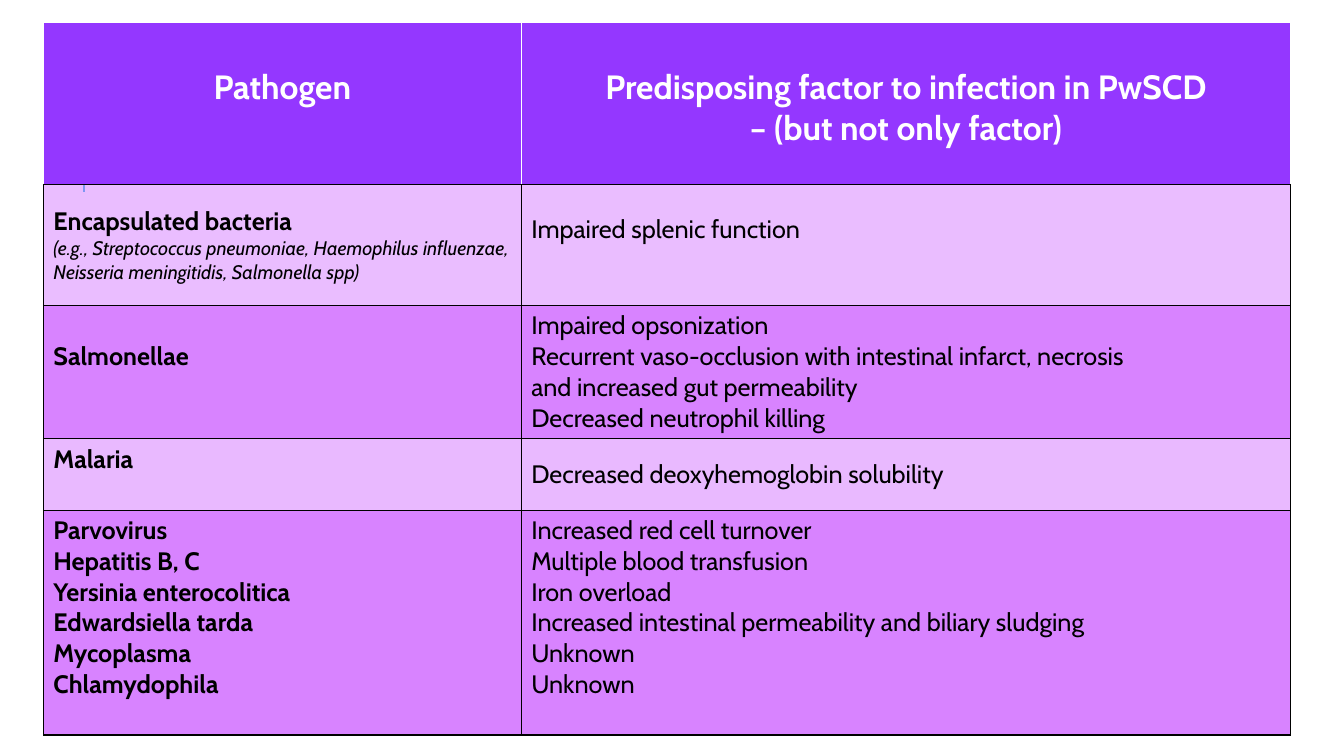
from lxml import etree
from pptx import Presentation
from pptx.dml.color import RGBColor
from pptx.enum.shapes import MSO_CONNECTOR
from pptx.enum.text import MSO_ANCHOR, PP_ALIGN
from pptx.oxml.ns import qn
from pptx.util import Inches, Pt

BLACK, WHITE = "000000", "FFFFFF"
HEADER, VIOLET, ACCENT = "9437FF", "D883FF", "1CADE4"
COLUMN_WIDTHS = [4.74, 7.63]
ROW_HEIGHTS = [1.61, 1.2, 1.31, 0.71, 2.23]
ROW_OPACITY = [53, 100, 56, 100]
RAISED = 0.35  # bottom margin that lifts middle-anchored text by half a line

HEADINGS = [
    ["Pathogen"],
    ["Predisposing factor to infection in PwSCD", "– (but not only factor)"],
]
EXAMPLES = ("(e.g., Streptococcus pneumoniae, Haemophilus influenzae, "
            "Neisseria meningitidis, Salmonella spp)")
# Each row: (pathogens, bottom margin), (factors, bottom margin)
ROWS = [
    ((["Encapsulated bacteria", EXAMPLES], 0.05),
     (["Impaired splenic function"], RAISED)),
    ((["Salmonellae"], RAISED),
     (["Impaired opsonization",
       "Recurrent vaso-occlusion with intestinal infarct, necrosis\n"
       "and increased gut permeability",
       "Decreased neutrophil killing"], 0.05)),
    ((["Malaria"], RAISED),
     (["Decreased deoxyhemoglobin solubility"], 0.05)),
    ((["Parvovirus\nHepatitis B, C", "Yersinia enterocolitica",
       "Edwardsiella tarda", "Mycoplasma", "Chlamydophila"], RAISED),
     (["Increased red cell turnover",
       "Multiple blood transfusion\nIron overload\n"
       "Increased intestinal permeability and biliary sludging",
       "Unknown\nUnknown"], RAISED)),
]


def rgb(code):
    return RGBColor.from_string(code)


def write(paragraph, text, size=18, color=BLACK, bold=False, italic=False,
          align=PP_ALIGN.LEFT, font="Cabin"):
    """Fill a paragraph, turning each newline into a line break."""
    paragraph.alignment = align
    for index, line in enumerate(text.split("\n")):
        if index:
            paragraph.add_line_break()
        run = paragraph.add_run()
        run.text = line
        run.font.name = font
        run.font.size = Pt(size)
        run.font.bold = bold
        run.font.italic = italic
        run.font.color.rgb = rgb(color)


class SlideBuilder:
    """Holds the slide and draws its elements in one style."""

    def __init__(self, slide):
        self.slide = slide

    def line(self, x1, y1, x2, y2, color, width):
        connector = self.slide.shapes.add_connector(
            MSO_CONNECTOR.STRAIGHT, *map(Inches, (x1, y1, x2, y2)))
        connector.line.color.rgb = rgb(color)
        connector.line.width = Pt(width)
        etree.SubElement(connector._element.spPr, qn("a:effectLst"))

    def table(self, left, top, widths, heights):
        table = self.slide.shapes.add_table(
            len(heights), len(widths), Inches(left), Inches(top),
            Inches(sum(widths)), Inches(sum(heights))).table
        table.horz_banding = False
        for column, width in zip(table.columns, widths):
            column.width = Inches(width)
        for row, height in zip(table.rows, heights):
            row.height = Inches(height)
        return table

    def borders(self, cell, **colors):
        """Draw 1 pt borders; the keywords L, R, T and B override black."""
        properties = cell._tc.get_or_add_tcPr()
        for side in "LRTB":
            border = etree.SubElement(properties, qn(f"a:ln{side}"), w=str(Pt(1)))
            fill = etree.SubElement(border, qn("a:solidFill"))
            etree.SubElement(fill, qn("a:srgbClr"), val=colors.get(side, BLACK))

    def fill(self, cell, color, opacity=100):
        cell.fill.solid()
        cell.fill.fore_color.rgb = rgb(color)
        if opacity < 100:
            shade = cell._tc.tcPr.find(f"{qn('a:solidFill')}/{qn('a:srgbClr')}")
            etree.SubElement(shade, qn("a:alpha"), val=str(opacity * 1000))

    def text(self, cell, lines, **style):
        frame = cell.text_frame
        for index, line in enumerate(lines):
            paragraph = frame.add_paragraph() if index else frame.paragraphs[0]
            if line == EXAMPLES:
                write(paragraph, line, size=14, italic=True)
            else:
                write(paragraph, line, **style)

    def heading_cell(self, cell, lines):
        self.borders(cell, L=WHITE, R=WHITE, T=WHITE)
        self.fill(cell, HEADER)
        cell.margin_top = Inches(0.45)
        self.text(cell, lines, size=24, color=WHITE, bold=True,
                  align=PP_ALIGN.CENTER)

    def body_cell(self, cell, lines, bottom, opacity, bold):
        self.borders(cell)
        self.fill(cell, VIOLET, opacity)
        cell.vertical_anchor = MSO_ANCHOR.MIDDLE
        cell.margin_bottom = Inches(bottom)
        self.text(cell, lines, bold=bold)


def main():
    presentation = Presentation()
    presentation.slide_width = Inches(13.33)
    presentation.slide_height = Inches(7.5)
    builder = SlideBuilder(
        presentation.slides.add_slide(presentation.slide_layouts[6]))

    builder.line(0.83, 1.9, 0.83, 0.9, ACCENT, 1.5)
    infections = builder.table(0.43, 0.22, COLUMN_WIDTHS, ROW_HEIGHTS)
    for column, heading in enumerate(HEADINGS):
        builder.heading_cell(infections.cell(0, column), heading)
    for row, (entries, opacity) in enumerate(zip(ROWS, ROW_OPACITY), start=1):
        for column, (lines, bottom) in enumerate(entries):
            builder.body_cell(infections.cell(row, column), lines, bottom,
                              opacity, bold=column == 0)

    presentation.save("out.pptx")


if __name__ == "__main__":
    main()
